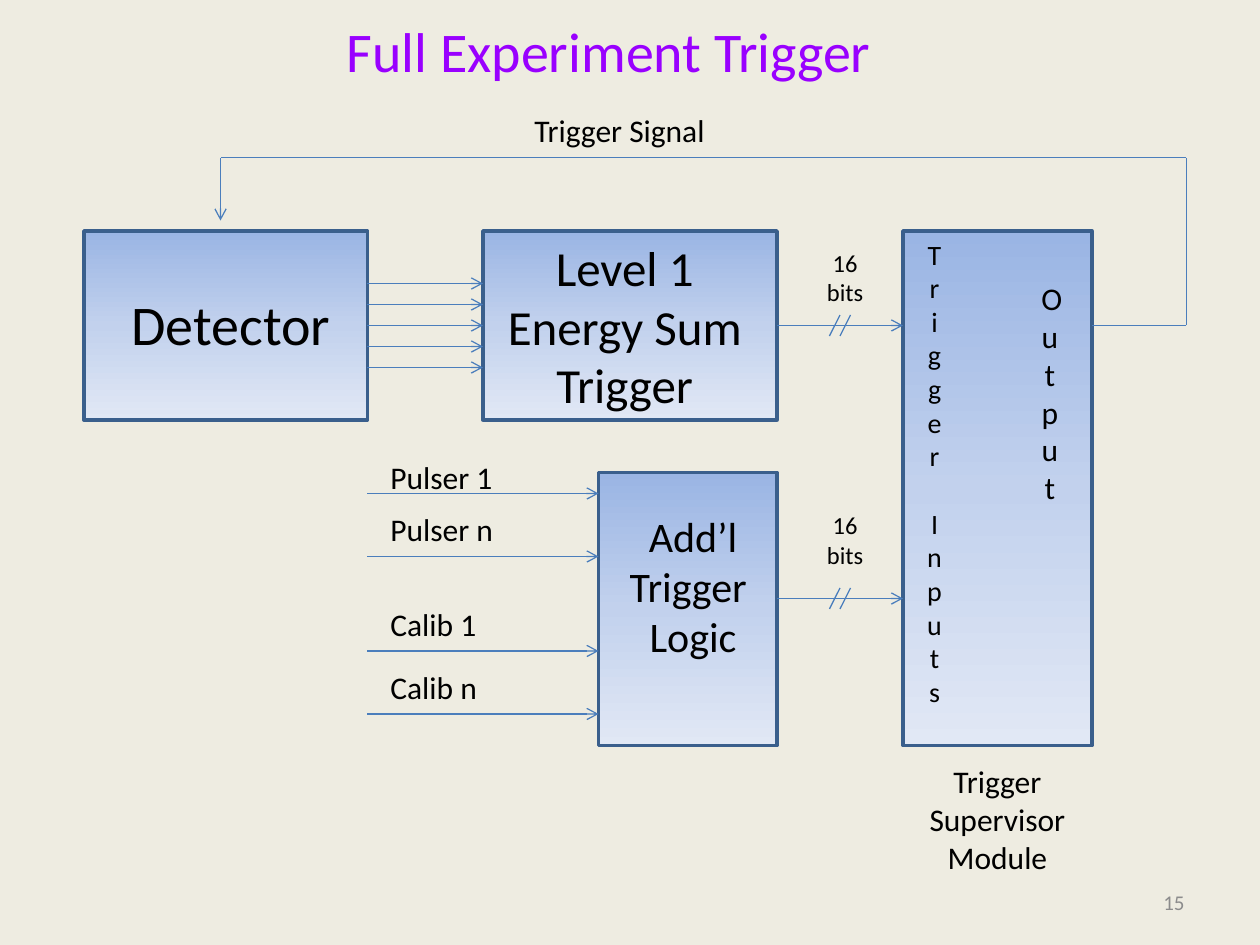
"""Build the Full Experiment Trigger block diagram slide."""
from copy import deepcopy

from lxml.etree import SubElement
from pptx import Presentation
from pptx.dml.color import RGBColor
from pptx.enum.shapes import MSO_CONNECTOR, MSO_SHAPE
from pptx.enum.text import MSO_ANCHOR, MSO_AUTO_SIZE, PP_ALIGN
from pptx.oxml.ns import qn
from pptx.util import Pt

BACKGROUND = RGBColor(0xEE, 0xEC, 0xE1)
BLACK = RGBColor(0x00, 0x00, 0x00)
PURPLE = RGBColor(0x99, 0x00, 0xFF)
GRAY = RGBColor(0x8C, 0x8C, 0x8C)
BORDER = RGBColor(0x3A, 0x5F, 0x8C)
WIRE = RGBColor(0x4B, 0x7E, 0xBC)
GRADIENT = (
    (0, RGBColor(0x9A, 0xB5, 0xE4)),
    (0.5, RGBColor(0xC2, 0xD1, 0xED)),
    (1, RGBColor(0xE1, 0xE8, 0xF5)),
)

deck = Presentation()
deck.slide_width, deck.slide_height = Pt(720), Pt(540)
page = deck.slides.add_slide(deck.slide_layouts[6])
page.background.fill.solid()
page.background.fill.fore_color.rgb = BACKGROUND


def add_text(lines, left, top, width, height, size=18, color=BLACK,
             align=PP_ALIGN.CENTER, anchor=MSO_ANCHOR.TOP, grow=True):
    box = page.shapes.add_textbox(Pt(left), Pt(top), Pt(width), Pt(height))
    frame = box.text_frame
    frame.word_wrap = True
    frame.auto_size = MSO_AUTO_SIZE.SHAPE_TO_FIT_TEXT if grow else MSO_AUTO_SIZE.NONE
    frame.vertical_anchor = anchor
    for index, line in enumerate(lines):
        para = frame.add_paragraph() if index else frame.paragraphs[0]
        para.alignment = align
        span = para.add_run()
        span.text = line
        span.font.name = "Calibri"
        span.font.size = Pt(size)
        span.font.color.rgb = color
    return box


def add_wire(start, end, arrow=True):
    wire = page.shapes.add_connector(
        MSO_CONNECTOR.STRAIGHT, *(Pt(value) for value in (*start, *end)))
    wire.line.color.rgb = WIRE
    wire.line.width = Pt(0.75)
    if arrow:
        SubElement(wire.line._get_or_add_ln(), qn("a:tailEnd"), type="arrow")
    SubElement(wire._element.spPr, qn("a:effectLst"))
    return wire


blocks = {}
for name, left, top, width, height in (
    ("detector", 48, 132, 162, 108),
    ("energy sum", 276, 132, 168, 108),
    ("supervisor", 516, 132, 108, 294),
    ("logic", 342, 270, 102, 156),
):
    block = page.shapes.add_shape(
        MSO_SHAPE.RECTANGLE, Pt(left), Pt(top), Pt(width), Pt(height))
    block.shadow.inherit = False
    block.line.color.rgb = BORDER
    block.line.width = Pt(2)
    block.fill.gradient()
    block.fill.gradient_angle = 270
    stop_list = block._element.spPr.find(".//" + qn("a:gsLst"))
    stop_list.insert(1, deepcopy(stop_list[0]))
    for stop, (position, color) in zip(block.fill.gradient_stops, GRADIENT):
        stop.position = position
        stop.color.rgb = color
    blocks[name] = block

add_text(["Full Experiment Trigger"], 126, 6, 444, 46, size=32, color=PURPLE)
add_text(["Trigger Signal"], 234, 60, 240, 29)
add_text(["Detector"], 60, 162, 144, 46, size=32)
add_text(["Level 1", "Energy Sum", "Trigger"], 282, 132, 150, 109, size=28)
add_text(["Add’l", "Trigger ", "Logic"], 348, 288, 96, 94, size=24)
add_text(["Trigger", "Supervisor", "Module"], 516, 432, 108, 73)
inputs = add_text(["T", "r", "igger", "Inputs"], 522, 132, 24, 279, size=16)
inputs.text_frame.paragraphs[-1].space_before = Pt(19.5)
add_text(list("Output"), 588, 156, 24, 138)

for y in range(162, 211, 12):
    wire = add_wire((210, y), (276, y))
    if y == 186:
        wire.begin_connect(blocks["detector"], 3)
        wire.end_connect(blocks["energy sum"], 1)

for label, text_top, y in (
    ("Pulser 1", 258, 282),
    ("Pulser n", 288, 318),
    ("Calib 1", 342, 372),
    ("Calib n", 378, 408),
):
    add_text([label], 216, text_top, 96, 29, align=PP_ALIGN.LEFT)
    add_wire((210, y), (342, y))

for source, y, text_top in (("energy sum", 186, 138), ("logic", 342, 288)):
    bus = add_wire((444, y), (516, y))
    if source == "energy sum":
        bus.begin_connect(blocks[source], 3)
    for x in (480, 486):
        add_wire((x, y - 6), (x - 6, y + 6), arrow=False)
    add_text(["16 bits"], 462, text_top, 42, 41, size=14)

route = [(624, 186), (678, 186), (678, 90), (126, 90), (126, 126)]
for start, end in zip(route, route[1:]):
    add_wire(start, end, arrow=end == route[-1])

add_text(["15"], 516, 501, 168, 29, size=12, color=GRAY,
         align=PP_ALIGN.RIGHT, anchor=MSO_ANCHOR.MIDDLE, grow=False)

deck.save("out.pptx")
